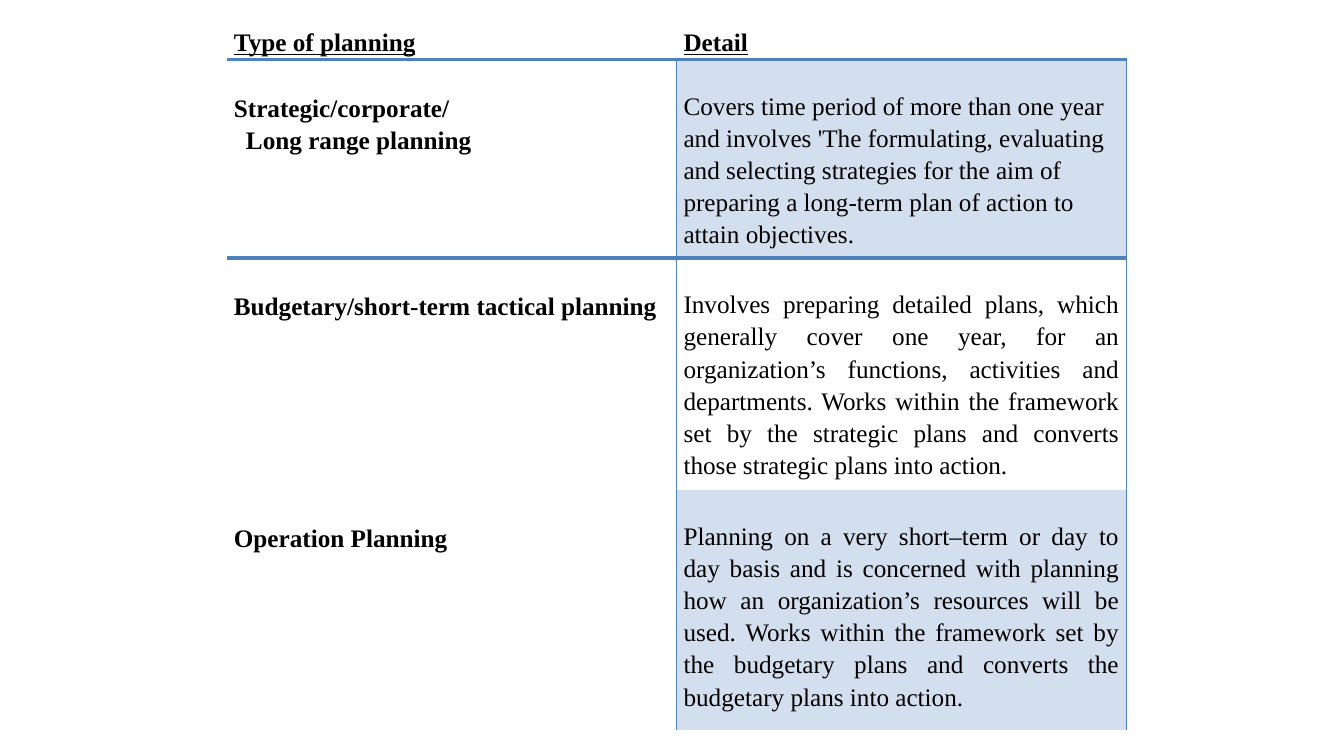
from dataclasses import dataclass

from lxml.etree import SubElement
from pptx import Presentation
from pptx.dml.color import RGBColor
from pptx.enum.text import PP_ALIGN
from pptx.oxml.ns import qn
from pptx.table import _Cell
from pptx.util import Inches, Pt

COLORS = {"ink": "000000", "line": "4F81BD", "band": "D3DFEE", "plain": "FFFFFF"}
FONT = "Times New Roman"
PLAIN_STYLE = "{2D5ABB26-0587-4C30-8999-92F81FD0307C}"
WIDE, HIGH = Inches(13.33), Inches(7.5)
LEFT, TOP = Inches(2.25), Inches(0.25)
COLUMN = Inches(4.46)
HANG = Inches(0.12)
THICK, THIN = 3, 1


@dataclass
class Plan:
    labels: list[str]
    detail: str
    height: float
    align: PP_ALIGN = PP_ALIGN.JUSTIFY
    hang: bool = False


HEAD = Plan(["Type of planning"], "Detail", 0.34, PP_ALIGN.LEFT, True)
PLANS = [
    Plan(
        ["Strategic/corporate/", "Long range planning"],
        "Covers time period of more than one year and involves 'The formulating, "
        "evaluating and selecting strategies for the aim of preparing a long-term "
        "plan of action to attain objectives.",
        1.97, PP_ALIGN.LEFT, True,
    ),
    Plan(
        ["Budgetary/short-term tactical planning"],
        "Involves preparing detailed plans, which generally cover one year, for an "
        "organization’s functions, activities and departments. Works within the "
        "framework set by the strategic plans and converts those strategic plans "
        "into action.",
        2.3,
    ),
    Plan(
        ["Operation Planning"],
        "Planning on a very short–term or day to day basis and is concerned with "
        "planning how an organization’s resources will be used. Works within the "
        "framework set by the budgetary plans and converts the budgetary plans "
        "into action.",
        2.38,
    ),
]


def write(cell: _Cell, lines: list[str], top: float, bold: bool,
          under: bool, align: PP_ALIGN, hang: bool) -> None:
    cell.margin_left = cell.margin_right = Inches(0.07)
    cell.margin_top, cell.margin_bottom = Inches(top), 0
    cell.text = "\n".join(lines)
    for i, par in enumerate(cell.text_frame.paragraphs):
        par.alignment = align
        par.line_spacing = 1.15
        font = par.font
        font.name, font.size = FONT, Pt(18)
        font.bold, font.underline = bold, under
        font.color.rgb = RGBColor.from_string(COLORS["ink"])
        if hang:
            props = par._p.get_or_add_pPr()
            props.set("marL", str(HANG))
            props.set("indent", str(0 if i else -HANG))


def edge(cell: _Cell, sides: dict[str, int]) -> None:
    """Draw cell borders, given in the order L, R, T, B with widths in points."""
    props = cell._tc.get_or_add_tcPr()
    for side, width in sides.items():
        line = SubElement(props, qn(f"a:ln{side}"), w=str(Pt(width)))
        fill = SubElement(line, qn("a:solidFill"))
        SubElement(fill, qn("a:srgbClr"), val=COLORS["line"])


def paint(cell: _Cell, color: str) -> None:
    cell.fill.solid()
    cell.fill.fore_color.rgb = RGBColor.from_string(COLORS[color])


def main() -> None:
    deck = Presentation()
    deck.slide_width, deck.slide_height = WIDE, HIGH
    slide = deck.slides.add_slide(deck.slide_layouts[6])

    plans = [HEAD, *PLANS]
    total = Inches(sum(plan.height for plan in plans))
    frame = slide.shapes.add_table(len(plans), 2, LEFT, TOP, 2 * COLUMN, total)
    table = frame.table
    table.first_row = table.horz_banding = False
    table._tbl.tblPr.find(qn("a:tableStyleId")).text = PLAIN_STYLE
    for column in table.columns:
        column.width = COLUMN

    for i, plan in enumerate(plans):
        table.rows[i].height = Inches(plan.height)
        head = i == 0
        label, detail = table.cell(i, 0), table.cell(i, 1)
        write(label, plan.labels, 0 if head else 0.31, True, head,
              PP_ALIGN.LEFT, plan.hang)
        write(detail, [plan.detail], 0 if head else 0.29, head, head,
              plan.align, False)
        rule = {"B": THICK} if head else {"T": THICK} if i == 1 else {}
        side = {} if head else {"R": THIN}
        edge(label, side | rule)
        edge(detail, ({} if head else {"L": THIN}) | side | rule)
        paint(label, "plain")
        paint(detail, "band" if i % 2 else "plain")

    deck.save("out.pptx")


if __name__ == "__main__":
    main()
